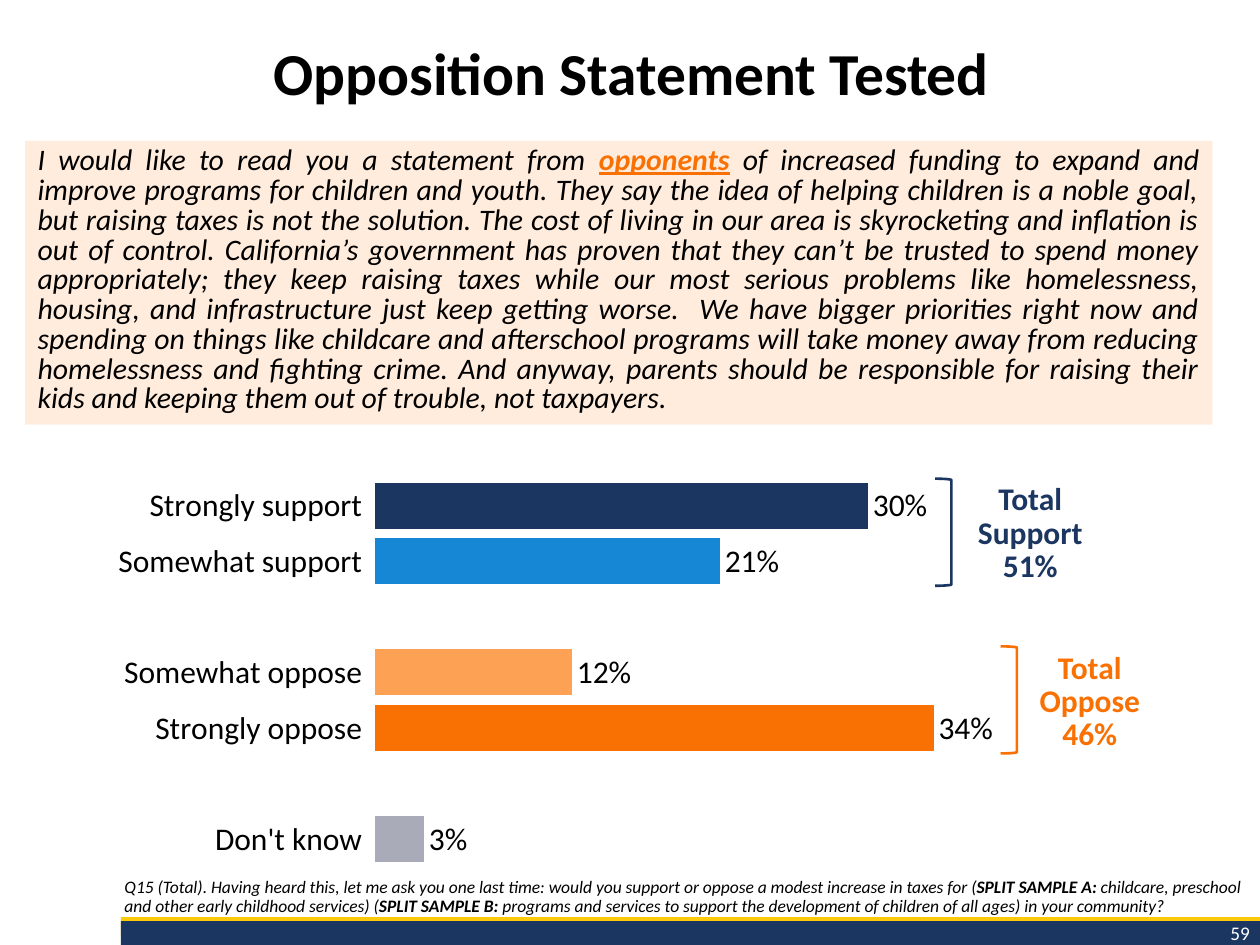
from dataclasses import dataclass

from lxml import etree
from pptx import Presentation
from pptx.chart.data import CategoryChartData
from pptx.dml.color import RGBColor
from pptx.enum.chart import XL_CHART_TYPE as ChartType
from pptx.enum.chart import XL_LABEL_POSITION as LabelPosition
from pptx.enum.chart import XL_TICK_LABEL_POSITION as TickLabelPosition
from pptx.enum.chart import XL_TICK_MARK as TickMark
from pptx.enum.shapes import MSO_SHAPE as Preset
from pptx.enum.text import MSO_ANCHOR as Anchor
from pptx.enum.text import PP_ALIGN as Align
from pptx.oxml import parse_xml
from pptx.oxml.ns import nsdecls
from pptx.util import Cm, Pt

NAVY, BLUE, ORANGE, PEACH = "1B3660", "1587D4", "F97103", "FDA155"
GREY, BLACK, WHITE = "A9ABB8", "000000", "FFFFFF"
FONT = "Calibri"


@dataclass
class Box:
    """Left, top, width and height in centimetres."""
    left: float
    top: float
    width: float
    height: float

    def lengths(self) -> list:
        return [Cm(value) for value in (self.left, self.top, self.width, self.height)]


@dataclass
class Part:
    """A stretch of text; format holds what differs from the paragraph."""
    text: str
    format: dict


@dataclass
class Total:
    label: str
    percent: str
    color: str
    bracket: Box
    box: Box


@dataclass
class Answer:
    label: str
    share: float | None = None
    color: str = WHITE


TOTALS = [
    Total("Total Support", "51%", NAVY, Box(18.85, 9.65, 0.33, 2.16), Box(19.18, 9.63, 3.18, 2.29)),
    Total("Total Oppose", "46%", ORANGE, Box(20.17, 13.03, 0.33, 2.16), Box(20.32, 13.03, 3.3, 2.29)),
]
ANSWERS = [
    Answer("Strongly support", 0.3, NAVY),
    Answer("Somewhat support", 0.21, BLUE),
    Answer(""),
    Answer("Somewhat oppose", 0.12, PEACH),
    Answer("Strongly oppose", 0.34, ORANGE),
    Answer(""),
    Answer("Don't know", 0.03, GREY),
]
STATEMENT = [
    Part("I would like to read you a statement from ", {}),
    Part("opponents", {"color": ORANGE, "bold": True, "underline": True}),
    Part(" of increased funding to expand and improve programs for children and youth. "
         "They say the idea of helping children is a noble goal, but raising taxes is not the "
         "solution. The cost of living in our area is skyrocketing and inflation is out of "
         "control. California’s government has proven that they can’t be trusted to spend money "
         "appropriately; they keep raising taxes while our most serious problems like "
         "homelessness, housing, and infrastructure just keep getting worse.  We have bigger "
         "priorities right now and spending on things like childcare and afterschool programs "
         "will take money away from reducing homelessness and fighting crime. And anyway, "
         "parents should be responsible for raising their kids and keeping them out of trouble, "
         "not taxpayers.", {}),
]
QUESTION = [
    Part("Q15 (Total). Having heard this, let me ask you one last time: would you support or "
         "oppose a modest increase in taxes for (", {}),
    Part("SPLIT SAMPLE A:", {"bold": True}),
    Part(" childcare, preschool and other early childhood services) (", {}),
    Part("SPLIT SAMPLE B:", {"bold": True}),
    Part(" programs and services to support the development of children of all ages) in your "
         "community?", {}),
]


def rgb(color: str) -> RGBColor:
    return RGBColor.from_string(color)


def set_font(font, **values) -> None:
    values = {"name": FONT, "color": BLACK} | values
    font.color.rgb = rgb(values.pop("color"))
    for name, value in values.items():
        setattr(font, name, value)


def fill_text(shape, parts: list[Part], format: dict, paragraph_format: dict,
              anchor=Anchor.TOP) -> None:
    frame = shape.text_frame
    frame.word_wrap = True
    frame.vertical_anchor = anchor
    paragraph = frame.paragraphs[0]
    for name, value in paragraph_format.items():
        setattr(paragraph, name, value)
    for index, part in enumerate(parts):
        for line_index, line in enumerate(part.text.split("\n")):
            if line_index:
                paragraph.add_line_break()
            run = paragraph.add_run()
            run.text = line
            set_font(run.font, **(format | part.format))


def add_text(slide, box: Box, parts: list[Part], format: dict, paragraph_format: dict,
             anchor=Anchor.TOP) -> None:
    shape = slide.shapes.add_textbox(*box.lengths())
    fill_text(shape, parts, format, paragraph_format, anchor)


def add_panel(slide, box: Box, color: str):
    shape = slide.shapes.add_shape(Preset.RECTANGLE, *box.lengths())
    shape.shadow.inherit = False
    shape.fill.solid()
    shape.fill.fore_color.rgb = rgb(color)
    shape.line.fill.background()
    return shape


def add_total(slide, total: Total) -> None:
    bracket = slide.shapes.add_shape(Preset.RIGHT_BRACKET, *total.bracket.lengths())
    bracket.shadow.inherit = False
    bracket.fill.background()
    bracket.line.color.rgb = rgb(total.color)
    bracket.line.width = Pt(1.5)
    add_text(slide, total.box, [Part(f"{total.label}\n{total.percent}", {})],
             {"size": Pt(18), "bold": True, "color": total.color},
             {"alignment": Align.CENTER, "line_spacing": Pt(19)})


def set_plot_layout(chart, **fractions: float) -> None:
    """Fix the inner plot area as fractions of the chart."""
    plot_area = chart.plots[0]._element.getparent()
    for old in plot_area.findall("{*}layout"):
        plot_area.remove(old)
    layout = parse_xml(f'<c:layout {nsdecls("c")}><c:manualLayout/></c:layout>')
    settings = {"layoutTarget": "inner", "xMode": "edge", "yMode": "edge"} | fractions
    namespace = etree.QName(layout).namespace
    for name, value in settings.items():
        etree.SubElement(layout[0], f"{{{namespace}}}{name}").set("val", str(value))
    plot_area.insert(0, layout)


def add_answer_chart(slide, box: Box, answers: list[Answer]) -> None:
    data = CategoryChartData(number_format="0%")
    data.categories = [answer.label for answer in answers]
    data.add_series("Series 1", [answer.share for answer in answers])
    chart = slide.shapes.add_chart(ChartType.BAR_CLUSTERED, *box.lengths(), data).chart
    chart.has_legend = chart.has_title = False
    set_font(chart.font, size=Pt(10))
    set_plot_layout(chart, x=0.27, y=0.035, w=0.7, h=0.88)

    # Axes
    categories, values = chart.category_axis, chart.value_axis
    categories.reverse_order = True
    categories.major_tick_mark = TickMark.NONE
    categories.tick_label_position = TickLabelPosition.LOW
    categories.format.line.fill.background()
    set_font(categories.tick_labels.font, size=Pt(18))
    for name, value in {"minimum_scale": 0, "maximum_scale": 0.45, "major_unit": 0.15,
                        "has_major_gridlines": False, "visible": False}.items():
        setattr(values, name, value)

    # Bars and their labels
    plot = chart.plots[0]
    plot.gap_width = 21
    plot.vary_by_categories = False
    for index, answer in enumerate(answers):
        if answer.share is not None:
            fill = plot.series[0].points[index].format.fill
            fill.solid()
            fill.fore_color.rgb = rgb(answer.color)
    labels = plot.series[0].data_labels
    for name, value in {"show_value": True, "number_format": "0%",
                        "number_format_is_linked": False,
                        "position": LabelPosition.OUTSIDE_END}.items():
        setattr(labels, name, value)
    set_font(labels.font, size=Pt(18))


def main() -> None:
    presentation = Presentation()
    presentation.slide_width, presentation.slide_height = Cm(25.4), Cm(19.05)
    slide = presentation.slides.add_slide(presentation.slide_layouts[6])

    # Footer band, page number and question wording
    add_panel(slide, Box(2.44, 18.49, 22.96, 0.41), "FCCA09")
    add_panel(slide, Box(2.44, 18.57, 22.96, 0.48), "1B3661")
    add_text(slide, Box(21.69, 18.44, 3.76, 0.74), [Part("59", {})],
             {"size": Pt(11), "color": WHITE}, {"alignment": Align.RIGHT})
    add_text(slide, Box(2.26, 17.22, 23.09, 1.37), QUESTION,
             {"size": Pt(10), "italic": True}, {"line_spacing": 0.9}, Anchor.BOTTOM)

    # Results
    add_answer_chart(slide, Box(1.8, 9.32, 21.31, 8.92), ANSWERS)
    for total in TOTALS:
        add_total(slide, total)

    # Statement and title
    panel = add_panel(slide, Box(0.51, 2.84, 23.93, 5.72), "FFECDD")
    fill_text(panel, STATEMENT, {"size": Pt(17), "italic": True},
              {"alignment": Align.JUSTIFY, "line_spacing": Pt(17)})
    add_text(slide, Box(0.03, 0.76, 25.4, 3.1), [Part("Opposition Statement Tested", {})],
             {"size": Pt(34), "bold": True}, {"alignment": Align.CENTER, "line_spacing": 0.9})

    presentation.save("out.pptx")


if __name__ == "__main__":
    main()
